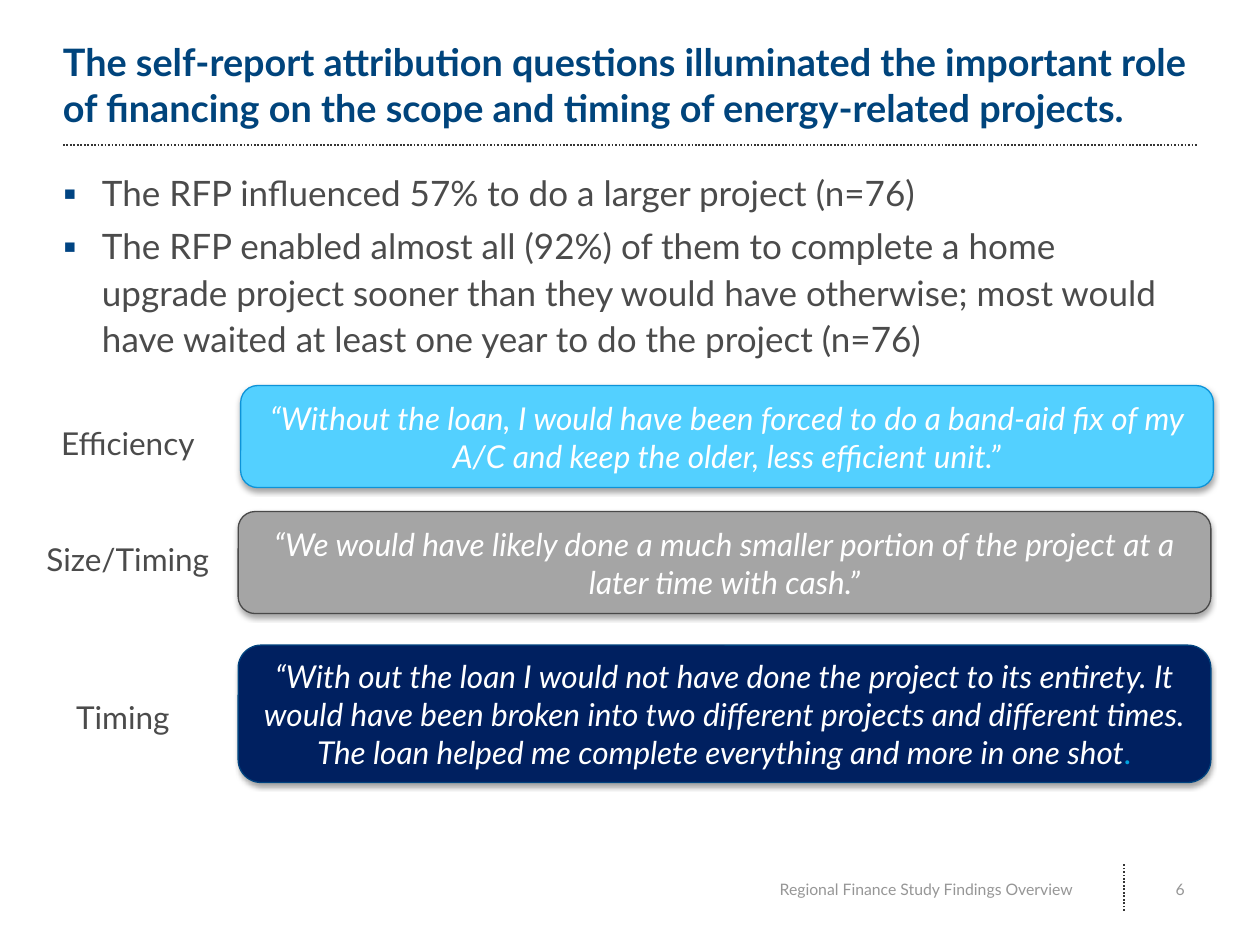
from lxml import etree
from pptx import Presentation
from pptx.dml.color import RGBColor
from pptx.enum.dml import MSO_LINE
from pptx.enum.shapes import MSO_CONNECTOR, MSO_SHAPE
from pptx.enum.text import MSO_ANCHOR, PP_ALIGN
from pptx.oxml.ns import qn
from pptx.util import Inches, Pt

STRAIGHT = MSO_CONNECTOR.STRAIGHT
ROUNDED = MSO_SHAPE.ROUNDED_RECTANGLE
DOTS = MSO_LINE.ROUND_DOT
TOP, MIDDLE, BOTTOM = MSO_ANCHOR.TOP, MSO_ANCHOR.MIDDLE, MSO_ANCHOR.BOTTOM
LEFT, CENTER, RIGHT = PP_ALIGN.LEFT, PP_ALIGN.CENTER, PP_ALIGN.RIGHT
FONT = "Lato"
COLORS = {
    "title": "00447C", "text": "4B4B4B", "bullet": "004482",
    "rule": "343434", "footer": "969696", "white": "FFFFFF",
    "sky": "53D0FF", "sky edge": "0D93D8", "gray": "A5A5A5",
    "gray edge": "494949", "navy": "002060", "navy edge": "00437F",
    "stop": "00A3E0", "shadow": "000000",
}
TITLE = ("The self-report attribution questions illuminated the important role "
         "of financing on the scope and timing of energy-related projects.")
POINTS = [
    "The RFP influenced 57% to do a larger project (n=76)",
    "The RFP enabled almost all (92%) of them to complete a home upgrade "
    "project sooner than they would have otherwise; most would have waited "
    "at least one year to do the project (n=76)",
]
QUOTES = [
    ("Efficiency", 0.23, 3.32, "sky", 1.91, 3.06, 0.81,
     "“Without the loan, I would have been forced to do a band-aid fix of my "
     "A/C and keep the older, less efficient unit.”", ""),
    ("Size/Timing", 0.23, 4.24, "gray", 1.89, 4.06, 0.81,
     "“We would have likely done a much smaller portion of the project at a "
     "later time with cash.”", ""),
    ("Timing", 0.19, 5.49, "navy", 1.89, 5.12, 1.09,
     "“With out the loan I would not have done the project to its entirety. It "
     "would have been broken into two different projects and different times. "
     "The loan helped me complete everything and more in one shot", "."),
]


def color(name):
    """Return the named colour."""
    return RGBColor.from_string(COLORS[name])


def style(para, size, tint, align=LEFT, bold=False, italic=False):
    """Set the alignment and font of a paragraph."""
    para.alignment = align
    font = para.font
    font.name, font.size = FONT, Pt(size)
    font.bold, font.italic = bold, italic
    font.color.rgb = color(tint)


def add_text(slide, box, text, size, tint, align=LEFT, anchor=TOP,
             bold=False, inset=True):
    """Add a wrapped text box with one paragraph."""
    frame = slide.shapes.add_textbox(*map(Inches, box)).text_frame
    frame.word_wrap = True
    frame.vertical_anchor = anchor
    if not inset:
        frame.margin_left = frame.margin_right = 0
        frame.margin_top = frame.margin_bottom = 0
    para = frame.paragraphs[0]
    para.text = text
    style(para, size, tint, align, bold)


def add_rule(slide, *ends):
    """Add a dotted line."""
    line = slide.shapes.add_connector(STRAIGHT, *map(Inches, ends))
    line.line.color.rgb = color("rule")
    line.line.width = Pt(1)
    line.line.dash_style = DOTS
    etree.SubElement(line.element.spPr, qn("a:effectLst"))


def add_bullet(para):
    """Give a paragraph a hanging square bullet."""
    props = para._p.get_or_add_pPr()
    props.set("marL", str(Inches(0.31)))
    props.set("indent", str(-Inches(0.31)))
    tint = etree.SubElement(props, qn("a:buClr"))
    etree.SubElement(tint, qn("a:srgbClr"), val=COLORS["bullet"])
    etree.SubElement(props, qn("a:buFont"), typeface=FONT)
    etree.SubElement(props, qn("a:buChar"), char="▪")


def add_points(slide, box, points):
    """Add the bulleted list."""
    frame = slide.shapes.add_textbox(*map(Inches, box)).text_frame
    frame.word_wrap = True
    frame.margin_left = frame.margin_top = frame.margin_bottom = 0
    for i, text in enumerate(points):
        para = frame.add_paragraph() if i else frame.paragraphs[0]
        para.text = text
        add_bullet(para)
        para.line_spacing = 1.1
        para.space_before = Pt(4 if i else 0)
        style(para, 20, "text")


def add_shadow(shape):
    """Put a soft shadow below a shape."""
    shape.shadow.inherit = False
    effects = shape.element.spPr.find(qn("a:effectLst"))
    outer = etree.SubElement(
        effects, qn("a:outerShdw"), blurRad=str(Pt(3.1)),
        dist=str(Pt(1.8)), dir="5400000", rotWithShape="0")
    tint = etree.SubElement(outer, qn("a:srgbClr"), val=COLORS["shadow"])
    etree.SubElement(tint, qn("a:alpha"), val="35000")


def add_quote(slide, box, fill, text, stop):
    """Add a rounded quote box, with an optional tinted full stop."""
    shape = slide.shapes.add_shape(ROUNDED, *map(Inches, box))
    shape.fill.solid()
    shape.fill.fore_color.rgb = color(fill)
    shape.line.color.rgb = color(fill + " edge")
    shape.line.width = Pt(0.75)
    add_shadow(shape)
    frame = shape.text_frame
    frame.word_wrap = True
    frame.vertical_anchor = MIDDLE
    para = frame.paragraphs[0]
    para.text = text
    style(para, 18, "white", CENTER, italic=True)
    if stop:
        run = para.add_run()
        run.text = stop
        run.font.color.rgb = color("stop")


def main():
    """Build and save the slide."""
    deck = Presentation()
    deck.slide_width, deck.slide_height = Inches(10), Inches(7.5)
    slide = deck.slides.add_slide(deck.slide_layouts[6])
    add_rule(slide, 0.5, 1.15, 9.5, 1.15)
    add_rule(slide, 8.92, 7.23, 8.92, 6.86)
    add_text(slide, (0.5, 0.4, 9, 0.63), TITLE, 21.6, "title",
             anchor=BOTTOM, bold=True, inset=False)
    add_text(slide, (5.4, 6.88, 3.21, 0.35),
             "Regional Finance Study Findings Overview", 9, "footer",
             RIGHT, MIDDLE)
    add_text(slide, (9.05, 6.88, 0.45, 0.36), "6", 9, "footer", RIGHT, MIDDLE)
    add_points(slide, (0.5, 1.33, 9, 1.67), POINTS)
    for label, x, y, fill, left, top, height, text, stop in QUOTES:
        add_quote(slide, (left, top, 7.72, height), fill, text, stop)
        add_text(slide, (x, y, 1.57, 0.4), label, 18, "text", CENTER)
    deck.save("out.pptx")


if __name__ == "__main__":
    main()
